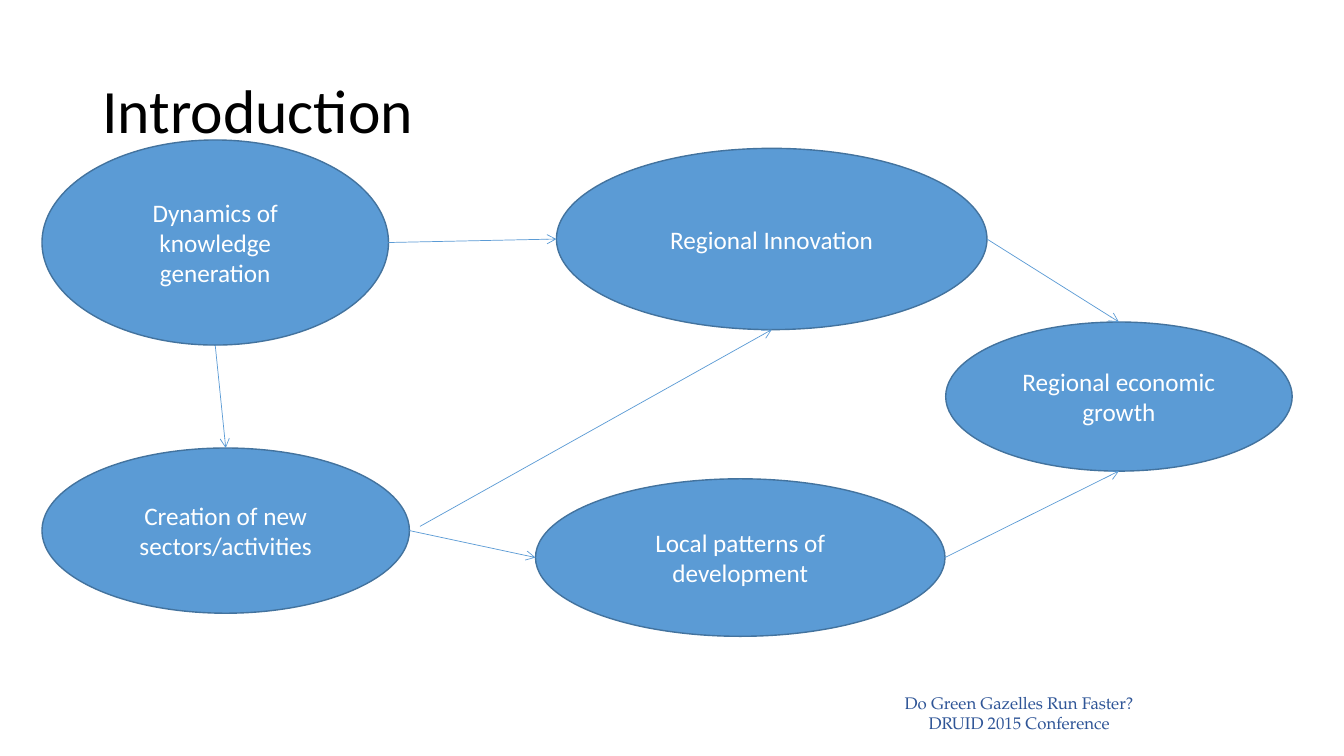
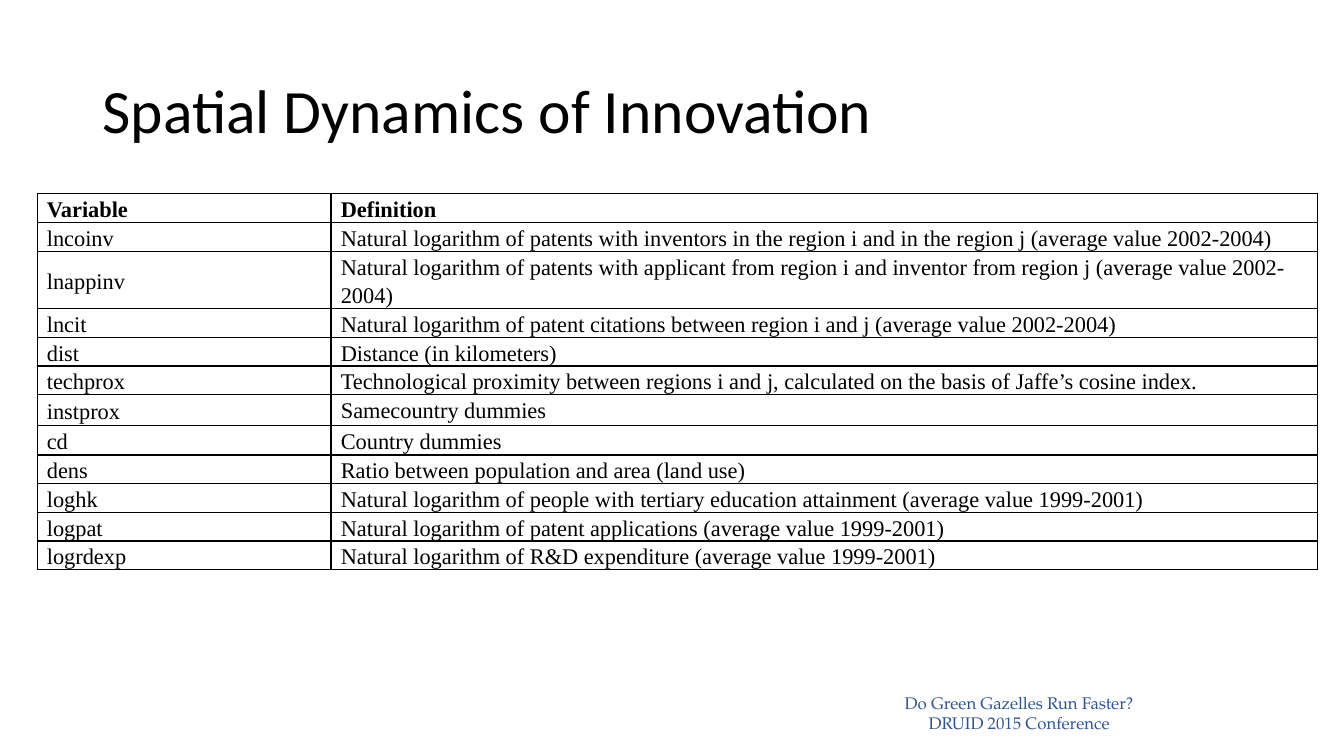
from lxml.etree import SubElement
from pptx import Presentation
from pptx.dml.color import RGBColor
from pptx.enum.shapes import MSO_CONNECTOR, MSO_SHAPE
from pptx.enum.text import MSO_ANCHOR, PP_ALIGN
from pptx.oxml.ns import qn
from pptx.util import Pt

HUES = {"text": "000000", "fill": "5B9BD5", "edge": "43739E",
        "light": "FFFFFF", "foot": "2F5597"}

FOOT = "Do Green Gazelles Run Faster?\nDRUID 2015 Conference"
TITLES = ["Introduction", "Spatial Dynamics of Innovation"]

NODES = {
    "region": ("Regional Innovation", 397.5, 106, 307.5, 129.5),
    "growth": ("Regional economic growth", 675.5, 230, 247.5, 106.5),
    "local": ("Local patterns of development", 382.5, 342, 292.5, 112.5),
    "sector": ("Creation of new sectors/activities", 30, 320, 262.5, 118),
    "know": ("Dynamics of knowledge generation", 30, 100, 247.5, 146.5),
}
LINKS = [
    ("know", "right", "region", "left"),
    ("region", "right", "growth", "top"),
    ("local", "right", "growth", "bottom"),
    ("know", "bottom", "sector", "top"),
    ("sector", "right", "local", "left"),
]
LOOSE = (300, 376)

SIDES = {"top": (0, 0.5, 0), "left": (2, 0, 0.5),
         "bottom": (4, 0.5, 1), "right": (6, 1, 0.5)}

ROWS = [
    ("Variable", "Definition"),
    ("lncoinv", "Natural logarithm of patents with inventors in the region i and in the region j (average value 2002-2004)"),
    ("lnappinv", "Natural logarithm of patents with applicant from region i and inventor from region j (average value 2002-2004)"),
    ("lncit", "Natural logarithm of patent citations between region i and j (average value 2002-2004)"),
    ("dist", "Distance (in kilometers)"),
    ("techprox", "Technological proximity between regions i and j, calculated on the basis of Jaffe’s cosine index."),
    ("instprox", "Samecountry dummies"),
    ("cd", "Country dummies"),
    ("dens", "Ratio between population and area (land use)"),
    ("loghk", "Natural logarithm of people with tertiary education attainment (average value 1999-2001)"),
    ("logpat", "Natural logarithm of patent applications (average value 1999-2001)"),
    ("logrdexp", "Natural logarithm of R&D expenditure (average value 1999-2001)"),
]
COLS = (210, 704.5)
HIGH = 20.5
TALL = {"lnappinv": 41, "instprox": 22, "cd": 21}


def tint(name):
    return RGBColor.from_string(HUES[name])


def style(frame, size, face, hue, align, space=1.0, bold=False):
    for para in frame.paragraphs:
        para.alignment = align
        para.line_spacing = space
        for run in para.runs:
            font = run.font
            font.size, font.name, font.bold = Pt(size), face, bold
            font.color.rgb = tint(hue)


def place(shape, left, top, width, height):
    shape.left, shape.top = Pt(left), Pt(top)
    shape.width, shape.height = Pt(width), Pt(height)


def add_slide(deck, layout, title):
    slide = deck.slides.add_slide(layout)
    head = slide.shapes.title
    place(head, 66, 29, 828, 104.5)
    frame = head.text_frame
    frame.text = title
    frame.vertical_anchor = MSO_ANCHOR.MIDDLE
    style(frame, 44, "Calibri", "text", PP_ALIGN.LEFT, 0.9)
    return slide


def add_foot(slide, layout):
    box = slide.shapes.add_textbox(Pt(517), Pt(491), Pt(422), Pt(36))
    box.text_frame.word_wrap = True
    box.text_frame.text = FOOT
    style(box.text_frame, 12, "TeX Gyre Pagella", "foot", PP_ALIGN.CENTER)
    layout.shapes._spTree.append(box._element)


def add_node(slide, text, *area):
    node = slide.shapes.add_shape(MSO_SHAPE.OVAL, *map(Pt, area))
    node.shadow.inherit = False
    node.fill.solid()
    node.fill.fore_color.rgb = tint("fill")
    node.line.color.rgb = tint("edge")
    node.line.width = Pt(1)
    frame = node.text_frame
    frame.word_wrap = True
    frame.vertical_anchor = MSO_ANCHOR.MIDDLE
    frame.text = text
    style(frame, 18, "Calibri", "light", PP_ALIGN.CENTER)
    return node


def spot(key, side):
    left, top, width, height = NODES[key][1:]
    across, down = SIDES[side][1:]
    return left + across * width, top + down * height


def add_arrow(slide, start, end):
    line = slide.shapes.add_connector(
        MSO_CONNECTOR.STRAIGHT, *map(Pt, start + end))
    line.line.color.rgb = tint("fill")
    line.line.width = Pt(0.5)
    SubElement(line.line._get_or_add_ln(), qn("a:tailEnd"), type="arrow")
    SubElement(line._element.spPr, qn("a:effectLst"))
    return line


def glue(line, tag, node, side):
    root = line._element.find(".//" + qn("p:cNvCxnSpPr"))
    SubElement(root, qn(tag), id=str(node.shape_id), idx=str(SIDES[side][0]))


def draw_flow(slide):
    nodes = {key: add_node(slide, *spec) for key, spec in NODES.items()}
    for tail, out, head, into in LINKS:
        line = add_arrow(slide, spot(tail, out), spot(head, into))
        glue(line, "a:stCxn", nodes[tail], out)
        glue(line, "a:endCxn", nodes[head], into)
    line = add_arrow(slide, LOOSE, spot("region", "bottom"))
    glue(line, "a:endCxn", nodes["region"], "bottom")


def add_edges(cell):
    props = cell._tc.get_or_add_tcPr()
    for side in "LRTB":
        edge = SubElement(props, qn("a:ln" + side), w=str(Pt(1)))
        fill = SubElement(edge, qn("a:solidFill"))
        SubElement(fill, qn("a:srgbClr"), val=HUES["text"])


def draw_table(slide):
    highs = [TALL.get(row[0], HIGH) for row in ROWS]
    table = slide.shapes.add_table(
        len(ROWS), len(COLS), Pt(26.5), Pt(138.5),
        Pt(sum(COLS)), Pt(sum(highs))).table
    table.first_row = table.horz_banding = False
    for col, width in zip(table.columns, COLS):
        col.width = Pt(width)
    for r, (row, high) in enumerate(zip(ROWS, highs)):
        table.rows[r].height = Pt(high)
        for c, text in enumerate(row):
            cell = table.cell(r, c)
            cell.margin_left = cell.margin_right = Pt(7)
            cell.margin_top = cell.margin_bottom = 0
            cell.vertical_anchor = MSO_ANCHOR.TOP if c else MSO_ANCHOR.MIDDLE
            add_edges(cell)
            cell.fill.background()
            cell.text_frame.text = text
            style(cell.text_frame, 16, "Times New Roman", "text",
                  PP_ALIGN.LEFT, 1.15, r == 0)


def main():
    deck = Presentation()
    deck.slide_width, deck.slide_height = Pt(960), Pt(540)
    layout = deck.slide_layouts[5]
    flow, terms = [add_slide(deck, layout, title) for title in TITLES]
    add_foot(flow, layout)
    draw_flow(flow)
    draw_table(terms)
    deck.save("out.pptx")


if __name__ == "__main__":
    main()
